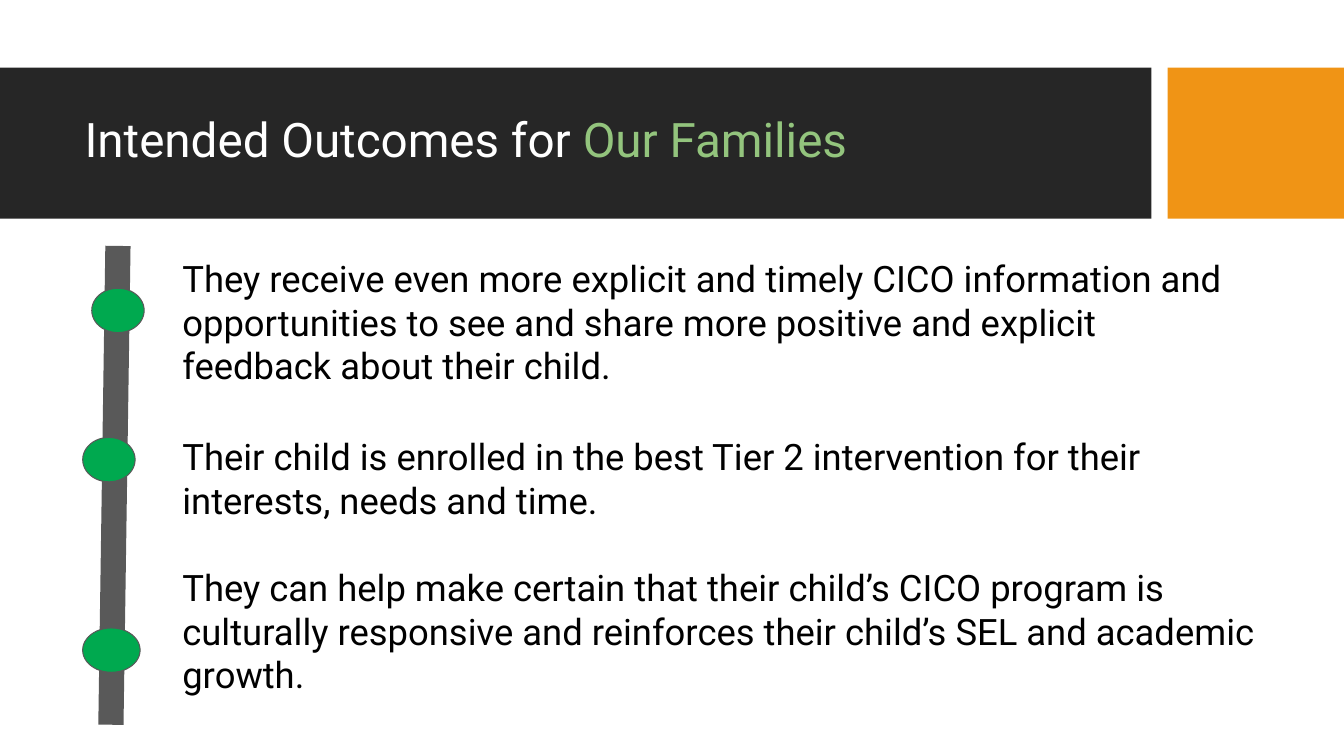
from pptx import Presentation
from pptx.dml.color import RGBColor
from pptx.enum.shapes import MSO_CONNECTOR as CONNECTOR, MSO_SHAPE as SHAPE
from pptx.enum.text import MSO_ANCHOR as ANCHOR
from pptx.oxml import parse_xml
from pptx.oxml.ns import nsdecls
from pptx.util import Pt

PX = 9144  # 100 px to the inch
FONT = "Roboto"
COLORS = {
    "band": "262626",
    "accent": "F09415",
    "title": "FFFFFF",
    "highlight": "93C47D",
    "rail": "595959",
    "marker": "00A94F",
    "body": "000000",
}
BODY_SIZE = 26
OUTCOME_GAP = 31  # points, one empty line of body text
OUTCOMES = [
    "They receive even more explicit and timely CICO information and opportunities "
    "to see and share more positive and explicit feedback about their child.",
    "Their child is enrolled in the best Tier 2 intervention for their interests, "
    "needs and time.",
    "They can help make certain that their child’s CICO program is culturally "
    "responsive and reinforces their child’s SEL and academic growth.",
]


def px(*lengths):
    return [length * PX for length in lengths]


def color(name):
    return RGBColor.from_string(COLORS[name])


def add_filled(slide, kind, box, fill, outline=None):
    shape = slide.shapes.add_shape(kind, *px(*box))
    shape.shadow.inherit = False
    shape.fill.solid()
    shape.fill.fore_color.rgb = color(fill)
    if outline:
        shape.line.color.rgb = color(outline)
        shape.line.width = Pt(0.75)
    else:
        shape.line.fill.background()


def add_text_frame(slide, box, inset_x, inset_y):
    frame = slide.shapes.add_textbox(*px(*box)).text_frame
    frame.word_wrap = True
    frame.margin_left = frame.margin_right = inset_x * PX
    frame.margin_top = frame.margin_bottom = inset_y * PX
    return frame


def add_header(slide, left, top, width, height):
    accent_width, gap = 175, 16
    band_width = width - accent_width - gap
    add_filled(slide, SHAPE.RECTANGLE, (left, top, band_width, height), "band")
    add_filled(slide, SHAPE.RECTANGLE,
               (left + width - accent_width, top, accent_width, height), "accent")

    # Two-coloured title
    frame = add_text_frame(slide, (left + 74, top + 15, 1051, 118), 10, 5)
    frame.vertical_anchor = ANCHOR.MIDDLE
    title = frame.paragraphs[0]
    title.line_spacing = 0.9
    title.font.size = Pt(34)
    title.font.name = FONT
    for words, tint in (("Intended Outcomes for ", "title"),
                        ("Our Families", "highlight")):
        run = title.add_run()
        run.text = words
        run.font.color.rgb = color(tint)


def add_timeline(slide, left, top, width, height):
    # Slightly tilted rail
    rail = slide.shapes.add_connector(
        CONNECTOR.STRAIGHT, *px(left + 35, top, left + 28, top + height))
    rail.line.color.rgb = color("rail")
    rail.line.width = Pt(18)
    rail._element.spPr.append(parse_xml(f"<a:effectLst {nsdecls('a')}/>"))

    # One marker per outcome
    for dx, dy, marker_width in ((9, 42, 52), (0, 190, 52), (0, 379, width)):
        add_filled(slide, SHAPE.OVAL, (left + dx, top + dy, marker_width, 44),
                   "marker", "rail")


def add_outcomes(slide, box, outcomes):
    frame = add_text_frame(slide, box, 10, 10)
    for index, outcome in enumerate(outcomes):
        paragraph = frame.add_paragraph() if index else frame.paragraphs[0]
        paragraph.text = outcome
        paragraph.font.size = Pt(BODY_SIZE)
        paragraph.font.name = FONT
        paragraph.font.color.rgb = color("body")
        if index:
            paragraph.space_before = Pt(OUTCOME_GAP)


def main():
    deck = Presentation()
    deck.slide_width, deck.slide_height = px(1333, 750)
    slide = deck.slides.add_slide(deck.slide_layouts[6])
    add_header(slide, 0, 67, 1333, 150)
    add_timeline(slide, 82, 244, 57, 475)
    add_outcomes(slide, (171, 244, 1082, 152), OUTCOMES[:1])
    add_outcomes(slide, (171, 421, 1112, 283), OUTCOMES[1:])
    deck.save("out.pptx")


if __name__ == "__main__":
    main()
